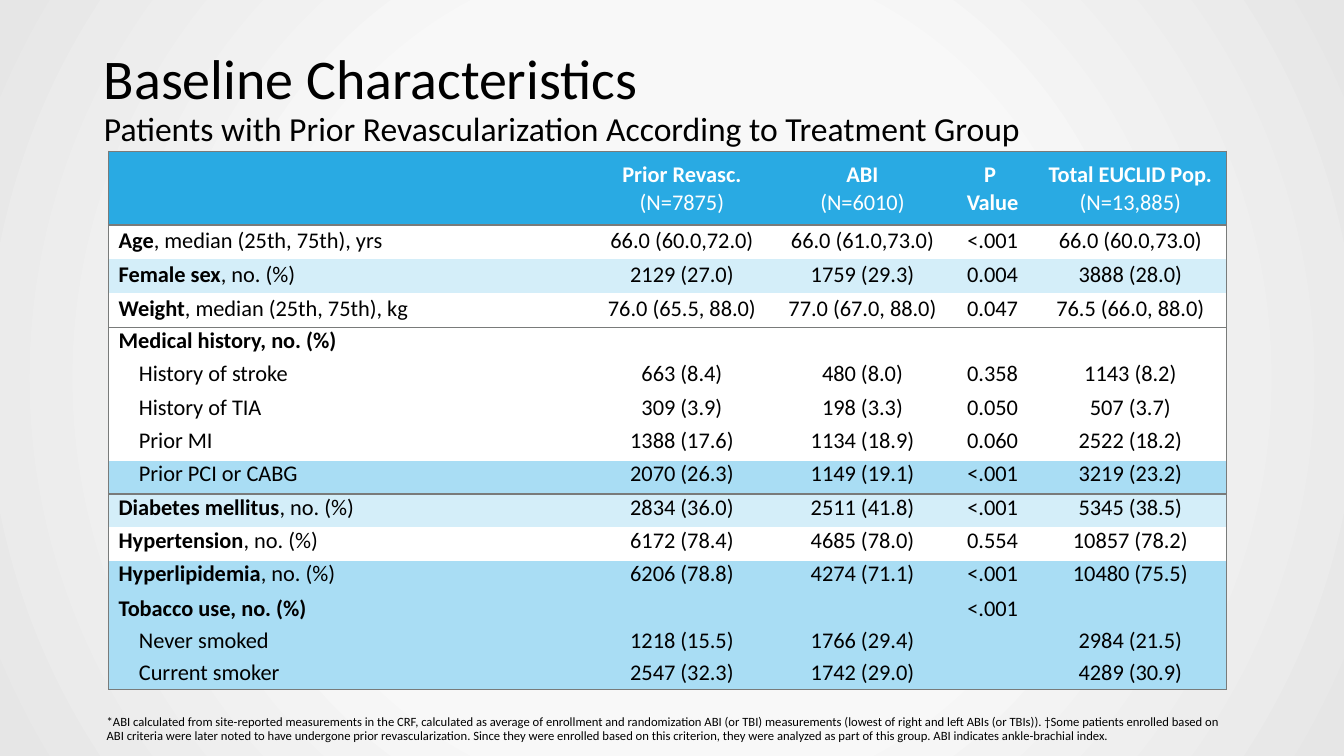
import pptx
import pptx.dml.color
import pptx.enum.text
import pptx.oxml
import pptx.oxml.ns
import pptx.util
from pptx.util import Cm, Pt

COLORS = {
    "text": "000000",
    "header": "29AAE3",
    "header_text": "FFFFFF",
    "white": "FFFFFF",
    "pale": "D4EEF9",
    "strong": "A9DDF4",
    "rule": "797B7A",
    "center": "F8F8F8",
    "edge": "E6E6E6",
}
FONT = "Calibri"
TABLE_LEFT = 2.74
TABLE_TOP = 3.81
COLUMN_WIDTHS = [12.12, 4.65, 4.45, 2.11, 4.83]

HEADER = [
    ("", ""),
    ("Prior Revasc.\n", "(N=7875)"),
    ("ABI\n", "(N=6010)"),
    ("P \nValue", ""),
    ("Total EUCLID Pop.\n", "(N=13,885)"),
]

DEMOGRAPHICS = [
    ("Age", ", median (25th, 75th), yrs", "white", "T",
     ["66.0 (60.0,72.0)", "66.0 (61.0,73.0)", "<.001", "66.0 (60.0,73.0)"]),
    ("Female sex", ", no. (%)", "pale", "",
     ["2129 (27.0)", "1759 (29.3)", "0.004", "3888 (28.0)"]),
    ("Weight", ", median (25th, 75th), kg", "white", "",
     ["76.0 (65.5, 88.0)", "77.0 (67.0, 88.0)", "0.047", "76.5 (66.0, 88.0)"]),
]

MEDICAL_HISTORY = [
    ("Medical history, no. (%)", "", "white", "T", ["", "", "", ""]),
    ("", "History of stroke", "white", "",
     ["663 (8.4)", "480 (8.0)", "0.358", "1143 (8.2)"]),
    ("", "History of TIA", "white", "",
     ["309 (3.9)", "198 (3.3)", "0.050", "507 (3.7)"]),
    ("", "Prior MI", "white", "",
     ["1388 (17.6)", "1134 (18.9)", "0.060", "2522 (18.2)"]),
    ("", "Prior PCI or CABG", "strong", "B",
     ["2070 (26.3)", "1149 (19.1)", "<.001", "3219 (23.2)"]),
    ("Diabetes mellitus", ", no. (%)", "pale", "T",
     ["2834 (36.0)", "2511 (41.8)", "<.001", "5345 (38.5)"]),
    ("Hypertension", ", no. (%)", "white", "",
     ["6172 (78.4)", "4685 (78.0)", "0.554", "10857 (78.2)"]),
    ("Hyperlipidemia", ", no. (%)", "strong", "",
     ["6206 (78.8)", "4274 (71.1)", "<.001", "10480 (75.5)"]),
]

TOBACCO_USE = [
    ("Tobacco use, no. (%)", "", "strong", "", ["", "", "<.001", ""]),
    ("", "Never smoked", "strong", "",
     ["1218 (15.5)", "1766 (29.4)", "", "2984 (21.5)"]),
    ("", "Current smoker", "strong", "B",
     ["2547 (32.3)", "1742 (29.0)", "", "4289 (30.9)"]),
]

FOOTNOTE = (
    "*ABI calculated from site-reported measurements in the CRF, calculated as average of "
    "enrollment and randomization ABI (or TBI) measurements (lowest of right and left ABIs "
    "(or TBIs)). †Some patients enrolled based on ABI criteria were later noted to have "
    "undergone prior revascularization. Since they were enrolled based on this criterion, "
    "they were analyzed as part of this group. ABI indicates ankle-brachial index."
)


def rgb(name):
    return pptx.dml.color.RGBColor.from_string(COLORS[name])


def apply_format(target, values):
    for attribute, value in values.items():
        setattr(target, attribute, value)


def add_text(paragraph, text, size, color="text", bold=False):
    for index, line in enumerate(text.split("\n")):
        if index:
            paragraph.add_line_break()
        if line:
            run = paragraph.add_run()
            run.text = line
            apply_format(run.font, {"name": FONT, "size": Pt(size), "bold": bold})
            run.font.color.rgb = rgb(color)


def set_background(slide):
    slide.background.fill.gradient()
    default = slide.element.find(".//" + pptx.oxml.ns.qn("a:gradFill"))
    stops = "".join(
        f'<a:gs pos="{position * 1000}"><a:srgbClr val="{COLORS[name]}"/></a:gs>'
        for position, name in [(0, "center"), (50, "center"), (100, "edge")]
    )
    radial = pptx.oxml.parse_xml(
        f'<a:gradFill {pptx.oxml.ns.nsdecls("a")} rotWithShape="1"><a:gsLst>{stops}</a:gsLst>'
        '<a:path path="circle"><a:fillToRect l="50000" t="50000" r="50000" b="50000"/>'
        "</a:path></a:gradFill>"
    )
    default.getparent().replace(default, radial)


def add_text_box(slide, bounds, frame_format, paragraph_format, parts):
    frame = slide.shapes.add_textbox(*map(Cm, bounds)).text_frame
    apply_format(frame, {"word_wrap": True, **frame_format})
    paragraph = frame.paragraphs[0]
    apply_format(paragraph, paragraph_format)
    for text, size in parts:
        add_text(paragraph, text, size)


def set_borders(cell, sides):
    properties = cell._tc.get_or_add_tcPr()
    for side in "LRTB":
        paint = (
            f'<a:solidFill><a:srgbClr val="{COLORS["rule"]}"/></a:solidFill>'
            if side in sides else "<a:noFill/>"
        )
        properties.append(pptx.oxml.parse_xml(
            f'<a:ln{side} {pptx.oxml.ns.nsdecls("a")} w="12700">{paint}</a:ln{side}>'
        ))


def fill_cell(cell, content, fill, sides, spacing, margin, color, centered, indent):
    set_borders(cell, sides)
    cell.fill.solid()
    cell.fill.fore_color.rgb = rgb(fill)
    apply_format(cell, {
        "vertical_anchor": pptx.enum.text.MSO_ANCHOR.MIDDLE,
        "margin_left": Cm(margin),
        "margin_right": Cm(margin),
        "margin_top": 0,
        "margin_bottom": 0,
    })
    paragraph = cell.text_frame.paragraphs[0]
    align = pptx.enum.text.PP_ALIGN
    apply_format(paragraph, {
        "line_spacing": Pt(spacing),
        "alignment": align.CENTER if centered else align.LEFT,
    })
    if indent:
        paragraph._p.get_or_add_pPr().set("marL", str(Cm(0.51)))
    for text, bold in zip(content, (True, False)):
        add_text(paragraph, text, 16, color, bold)


def add_section(slide, top, heights, rows, spacing, header=None):
    lines = [(header, "header", "TB", 20, 0.28, "header_text")] if header else []
    for bold, plain, fill, edges, values in rows:
        cells = [(bold, plain)] + [("", value) for value in values]
        lines.append((cells, fill, edges, spacing, 0.25, "text"))
    table = slide.shapes.add_table(
        len(lines), len(COLUMN_WIDTHS), Cm(TABLE_LEFT), Cm(top),
        Cm(sum(COLUMN_WIDTHS)), Cm(sum(heights)),
    ).table
    apply_format(table, {"first_row": False, "horz_banding": False})
    for column, width in zip(table.columns, COLUMN_WIDTHS):
        column.width = Cm(width)
    last = len(COLUMN_WIDTHS) - 1
    for row, (cells, fill, edges, leading, margin, color) in enumerate(lines):
        table.rows[row].height = Cm(heights[row])
        for column, content in enumerate(cells):
            sides = edges + {0: "L", last: "R"}.get(column, "")
            indent = column == 0 and not content[0]
            fill_cell(table.cell(row, column), content, fill, sides, leading,
                      margin, color, column > 0, indent)
    return top + sum(heights)


def main():
    deck = pptx.Presentation()
    apply_format(deck, {"slide_width": Cm(33.87), "slide_height": Cm(19.05)})
    slide = deck.slides.add_slide(deck.slide_layouts[6])
    set_background(slide)
    add_text_box(
        slide, (2.11, 1.17, 28.78, 3.18),
        {"margin_left": Cm(0.51), "margin_right": Cm(0.25),
         "margin_top": Cm(0.13), "margin_bottom": Cm(0.13)},
        {"line_spacing": 0.9},
        [("Baseline Characteristics\n", 40),
         ("Patients with Prior Revascularization According to Treatment Group", 24)],
    )
    add_text_box(
        slide, (2.69, 17.78, 28.22, 0.94),
        {"margin_left": 0, "margin_right": 0, "margin_top": Cm(0.25), "margin_bottom": 0,
         "auto_size": pptx.enum.text.MSO_AUTO_SIZE.SHAPE_TO_FIT_TEXT},
        {"line_spacing": 0.9},
        [(FOOTNOTE, 9)],
    )
    history_top = add_section(slide, TABLE_TOP, [1.86] + [0.86] * 3, DEMOGRAPHICS, 18, HEADER)
    tobacco_top = add_section(slide, history_top, [0.84] * 8, MEDICAL_HISTORY, 15)
    add_section(slide, tobacco_top, [0.8] * 3, TOBACCO_USE, 18)
    deck.save("out.pptx")


if __name__ == "__main__":
    main()
